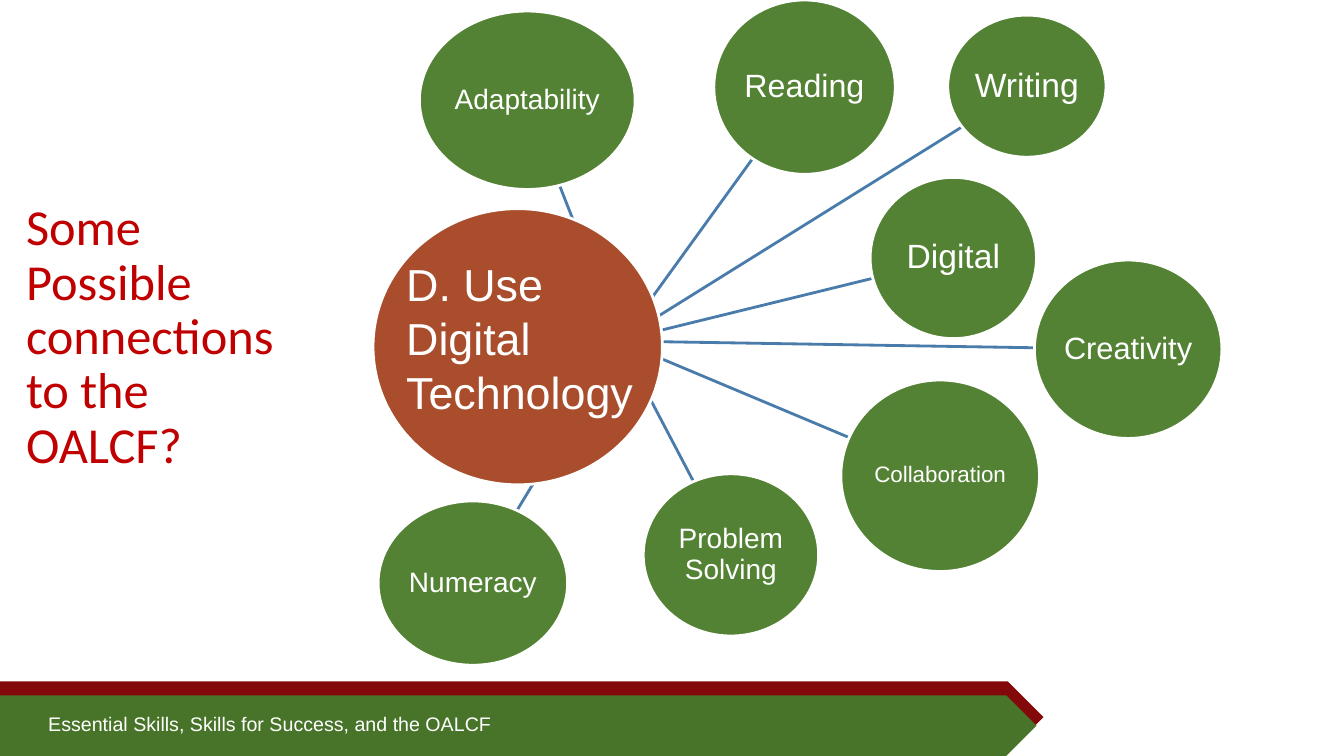
from dataclasses import dataclass

from lxml.etree import SubElement
from pptx import Presentation
from pptx.dml.color import RGBColor
from pptx.enum.shapes import MSO_CONNECTOR, MSO_SHAPE
from pptx.enum.text import MSO_ANCHOR, PP_ALIGN
from pptx.oxml.ns import qn
from pptx.util import Inches, Pt

COLORS = {
    "white": "FFFFFF",
    "title": "C00000",
    "spoke": "497CAB",
    "hub": "A94D2D",
    "skill": "548235",
    "banner_back": "82080A",
    "banner_front": "487429",
}


@dataclass
class Box:
    left: float
    top: float
    width: float
    height: float

    def lengths(self) -> list:
        return [Inches(v) for v in (self.left, self.top, self.width, self.height)]


@dataclass
class Skill:
    name: str
    size: int
    box: Box
    spoke: tuple


SKILLS = [
    Skill("Reading", 23, Box(7.08, 0, 1.8, 1.73), (6.44, 2.99, 7.46, 1.58)),
    Skill("Writing", 24, Box(9.4, 0.15, 1.57, 1.41), (6.54, 3.13, 9.54, 1.26)),
    Skill("Digital", 24, Box(8.63, 1.76, 1.65, 1.6), (6.54, 3.28, 8.66, 2.76)),
    Skill("Creativity", 22, Box(10.26, 2.58, 1.86, 1.77), (6.54, 3.39, 10.26, 3.45)),
    Skill("Collaboration", 16, Box(8.34, 3.77, 1.97, 1.9), (6.54, 3.55, 8.42, 4.34)),
    Skill("Adaptability", 20, Box(4.16, 0.11, 2.14, 1.77), (6, 2.99, 5.55, 1.84)),
    Skill("Problem Solving", 20, Box(6.38, 4.7, 1.74, 1.61), (6.35, 3.77, 6.88, 4.78)),
    Skill("Numeracy", 20, Box(3.75, 4.97, 1.88, 1.63), (5.91, 3.77, 5.13, 5.06)),
]


def rgb(color: str) -> RGBColor:
    return RGBColor.from_string(COLORS[color])


def apply(target, formats: dict) -> None:
    for attribute, value in formats.items():
        setattr(target, attribute, value)


def write(shape, text: str, size: int, frame: dict, paragraph: dict,
          font: str = "Arial", color: str = "white") -> None:
    apply(shape.text_frame, {"word_wrap": True, **frame})
    line = shape.text_frame.paragraphs[0]
    line.text = text
    apply(line, paragraph)
    apply(line.font, {"name": font, "size": Pt(size)})
    line.font.color.rgb = rgb(color)


def add_label(slide, box: Box, text: str, size: int, frame: dict, paragraph: dict,
              font: str = "Arial", color: str = "white") -> None:
    label = slide.shapes.add_textbox(*box.lengths())
    write(label, text, size, frame, paragraph, font, color)


def add_filled(slide, kind: MSO_SHAPE, box: Box, color: str, outlined: bool):
    shape = slide.shapes.add_shape(kind, *box.lengths())
    shape.shadow.inherit = False
    shape.fill.solid()
    shape.fill.fore_color.rgb = rgb(color)
    if outlined:
        shape.line.color.rgb = rgb("white")
        shape.line.width = Pt(2)
    else:
        shape.line.fill.background()
    return shape


def add_spoke(slide, ends: tuple) -> None:
    spoke = slide.shapes.add_connector(
        MSO_CONNECTOR.STRAIGHT, *[Inches(v) for v in ends])
    spoke.line.color.rgb = rgb("spoke")
    spoke.line.width = Pt(2)
    SubElement(spoke._element.spPr, qn("a:effectLst"))


def add_skill(slide, skill: Skill) -> None:
    circle = add_filled(slide, MSO_SHAPE.OVAL, skill.box, "skill", True)
    margins = dict.fromkeys(
        ("margin_left", "margin_top", "margin_right", "margin_bottom"), Inches(0.01))
    write(circle, skill.name, skill.size,
          {"vertical_anchor": MSO_ANCHOR.MIDDLE, **margins},
          {"alignment": PP_ALIGN.CENTER, "line_spacing": 0.9})


def main() -> None:
    deck = Presentation()
    apply(deck, {"slide_width": Inches(13.33), "slide_height": Inches(7.5)})
    slide = deck.slides.add_slide(deck.slide_layouts[6])

    add_filled(slide, MSO_SHAPE.PENTAGON, Box(0, 6.76, 10.35, 0.71), "banner_back", False)
    add_filled(slide, MSO_SHAPE.PENTAGON, Box(0, 6.9, 10.28, 0.6), "banner_front", False)
    add_label(slide, Box(0.38, 7.01, 9.27, 0.34),
              "Essential Skills, Skills for Success, and the OALCF", 14, {}, {})
    add_label(slide, Box(0.16, 0.69, 2.98, 5.33),
              "Some Possible connections to the OALCF?", 36,
              {"vertical_anchor": MSO_ANCHOR.MIDDLE}, {"line_spacing": 0.9},
              "Calibri", "title")

    for skill in SKILLS:
        add_spoke(slide, skill.spoke)
    add_filled(slide, MSO_SHAPE.OVAL, Box(3.7, 2.07, 2.87, 2.74), "hub", True)
    for skill in SKILLS:
        add_skill(slide, skill)
    add_label(slide, Box(3.93, 2.5, 2.59, 1.72), "D. Use Digital Technology", 32, {}, {})

    deck.save("out.pptx")


if __name__ == "__main__":
    main()
